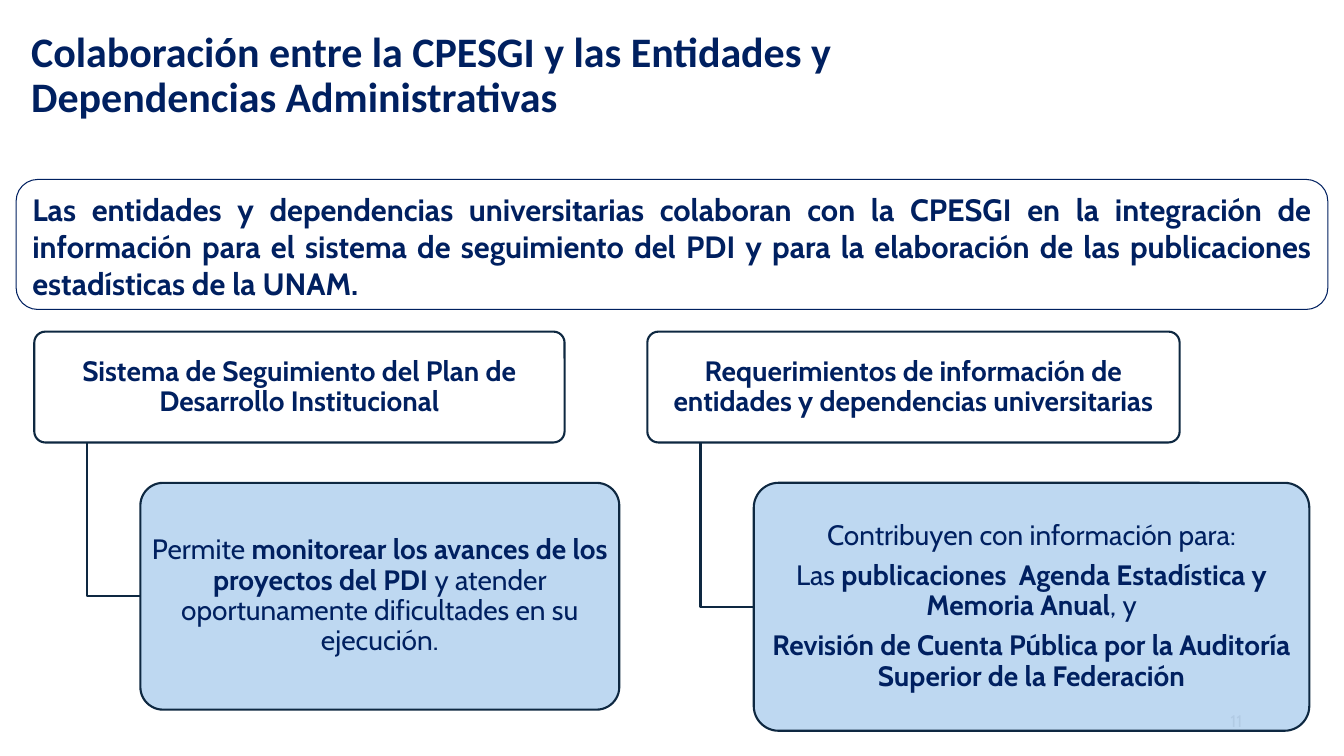
"""Builds the slide on how university entities collaborate with the CPESGI."""
from lxml import etree
from pptx import Presentation
from pptx import util as u
from pptx.dml.color import RGBColor
from pptx.enum import shapes, text
from pptx.oxml.ns import qn

NAVY, OUTLINE, WHITE, PALE_BLUE = "002060", "0E2841", "FFFFFF", "B8D4F0"


def color(hex_string):
    return RGBColor.from_string(hex_string)


def write(shape, paragraphs, size, font="Cabin", ink=NAVY, align=text.PP_ALIGN.CENTER,
          anchor=text.MSO_ANCHOR.MIDDLE, spacing=0.9, after=0):
    """Fills a shape with paragraphs, each a list of (wording, bold) runs."""
    frame = shape.text_frame
    frame.word_wrap = True
    frame.vertical_anchor = anchor
    for index, runs in enumerate(paragraphs):
        paragraph = frame.paragraphs[0] if index == 0 else frame.add_paragraph()
        paragraph.alignment = align
        paragraph.line_spacing = spacing
        paragraph.space_after = u.Pt(after)
        paragraph.font.name = font
        paragraph.font.size = u.Pt(size)
        paragraph.font.color.rgb = color(ink)
        for wording, bold in runs:
            run = paragraph.add_run()
            run.text = wording
            run.font.bold = bold


presentation = Presentation()
presentation.slide_width = u.Inches(13.33)
presentation.slide_height = u.Inches(7.5)
slide = presentation.slides.add_slide(presentation.slide_layouts[6])

title = slide.shapes.add_textbox(u.Inches(0.21), u.Inches(0.28), u.Inches(9.21), u.Inches(0.98))
write(title, [[("Colaboración entre la CPESGI y las Entidades y Dependencias Administrativas", True)]],
      30, font="Calibri", align=text.PP_ALIGN.LEFT, anchor=text.MSO_ANCHOR.BOTTOM)

summary = slide.shapes.add_shape(shapes.MSO_SHAPE.ROUNDED_RECTANGLE, u.Inches(0.16),
                                 u.Inches(1.78), u.Inches(13.01), u.Inches(1.29))
summary.shadow.inherit = False
summary.fill.solid()
summary.fill.fore_color.rgb = color(WHITE)
summary.line.color.rgb = color(NAVY)
summary.line.width = u.Pt(0.75)
write(summary, [[("Las entidades y dependencias universitarias colaboran con la CPESGI en la "
                  "integración de información para el sistema de seguimiento del PDI y para la "
                  "elaboración de las publicaciones estadísticas de la UNAM.", True)]],
      22, align=text.PP_ALIGN.JUSTIFY, anchor=text.MSO_ANCHOR.TOP, spacing=1.0)

number = slide.shapes.add_textbox(u.Inches(9.42), u.Inches(6.95), u.Inches(3), u.Inches(0.4))
write(number, [[("11", False)]], 12, ink="797979", align=text.PP_ALIGN.RIGHT, spacing=1.0)

HEADING_TOP, HEADING_HEIGHT, DETAIL_TOP = 3.29, 1.1, 4.79
branches = [
    (0.34, 5.26, 4.75, 2.25,
     "Sistema de Seguimiento del Plan de Desarrollo Institucional",
     [[("Permite ", False), ("monitorear los avances de los proyectos del PDI ", True),
       ("y atender oportunamente dificultades en su ejecución.", False)]]),
    (6.42, 5.28, 5.51, 2.46,
     "Requerimientos de información de entidades y dependencias universitarias",
     [[("Contribuyen con información para:", False)],
      [("Las ", False), ("publicaciones  Agenda Estadística y Memoria Anual", True), (", y", False)],
      [("Revisión de Cuenta Pública por la Auditoría Superior de la Federación", True)]]),
]

for left, heading_width, detail_width, detail_height, heading, details in branches:
    stem = left + heading_width / 10
    detail_left = left + heading_width / 5
    stem_bottom = DETAIL_TOP + detail_height / 2
    builder = slide.shapes.build_freeform(u.Inches(stem), u.Inches(HEADING_TOP + HEADING_HEIGHT))
    builder.add_line_segments([(u.Inches(stem), u.Inches(stem_bottom)),
                               (u.Inches(detail_left), u.Inches(stem_bottom))], close=False)
    elbow = builder.convert_to_shape()
    elbow.shadow.inherit = False
    elbow.fill.background()
    elbow.line.color.rgb = color(OUTLINE)
    elbow.line.width = u.Pt(1.5)

    boxes = [
        (left, HEADING_TOP, heading_width, HEADING_HEIGHT, WHITE, 100, [[(heading, True)]]),
        (detail_left, DETAIL_TOP, detail_width, detail_height, PALE_BLUE, 90, details),
    ]
    for x, y, width, height, fill, opacity, paragraphs in boxes:
        box = slide.shapes.add_shape(shapes.MSO_SHAPE.ROUNDED_RECTANGLE, u.Inches(x),
                                     u.Inches(y), u.Inches(width), u.Inches(height))
        box.adjustments[0] = 0.1
        box.shadow.inherit = False
        box.fill.solid()
        box.fill.fore_color.rgb = color(fill)
        if opacity < 100:
            tint = box.fill._xPr.find(qn("a:solidFill"))[0]
            etree.SubElement(tint, qn("a:alpha")).set("val", str(opacity * 1000))
        box.line.color.rgb = color(OUTLINE)
        box.line.width = u.Pt(1.5)
        frame = box.text_frame
        frame.margin_left = frame.margin_right = u.Inches(0.04)
        frame.margin_top = frame.margin_bottom = u.Inches(0.03)
        write(box, paragraphs, 20, after=7)

presentation.save("out.pptx")
